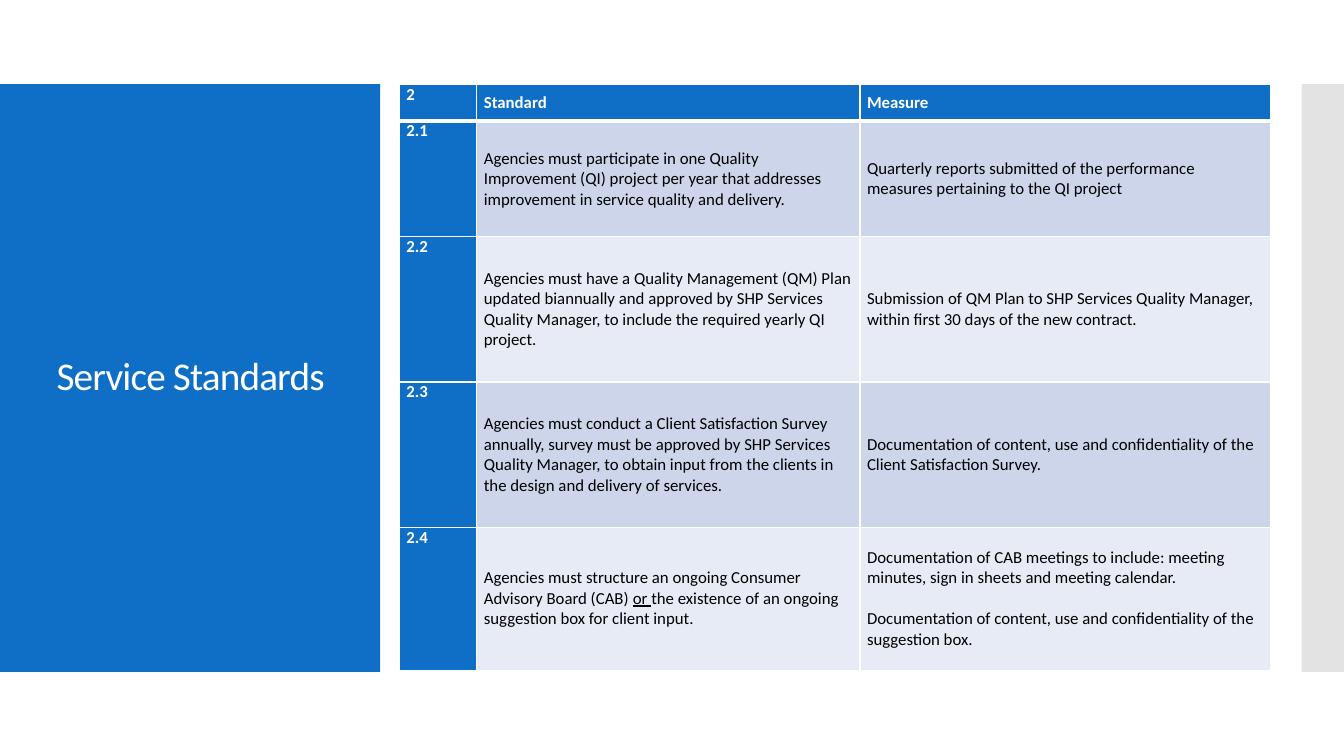
from dataclasses import dataclass

from lxml.etree import SubElement
from pptx import Presentation
from pptx.dml.color import RGBColor
from pptx.enum.shapes import MSO_SHAPE as Shape
from pptx.enum.text import MSO_ANCHOR as Anchor, PP_ALIGN as Align
from pptx.oxml.ns import qn
from pptx.util import Inches, Pt

# Content: a cell is a list of paragraphs, a paragraph a list of (text, underlined)
TITLE = "Service Standards"
HEADER = ("2", "Standard", "Measure")
STANDARDS = [
    ("2.1",
     [[("Agencies must participate in one Quality Improvement (QI) project per year "
        "that addresses improvement in service quality and delivery.", False)]],
     [[("Quarterly reports submitted of the performance measures pertaining to the "
        "QI project", False)]]),
    ("2.2",
     [[("Agencies must have a Quality Management (QM) Plan updated biannually and "
        "approved by SHP Services Quality Manager, to include the required yearly "
        "QI project.", False)]],
     [[("Submission of QM Plan to SHP Services Quality Manager, within first 30 days "
        "of the new contract.", False)]]),
    ("2.3",
     [[("Agencies must conduct a Client Satisfaction Survey annually, survey must be "
        "approved by SHP Services Quality Manager, to obtain input from the clients "
        "in the design and delivery of services.", False)]],
     [[("Documentation of content, use and confidentiality of the Client "
        "Satisfaction Survey.", False)]]),
    ("2.4",
     [[("Agencies must structure an ongoing Consumer Advisory Board (CAB) ", False),
       ("or ", True),
       ("the existence of an ongoing suggestion box for client input.", False)]],
     [[("Documentation of CAB meetings to include: meeting minutes, sign in sheets "
        "and meeting calendar.", False)],
      [("Documentation of content, use and confidentiality of the suggestion box.",
        False)]]),
]


@dataclass(frozen=True)
class Theme:
    font: str = "Calibri"
    title_size: float = 28
    body_size: float = 12
    paragraph_gap: float = 14.6
    blue: str = "0F6FC6"
    grey: str = "C8C8C8"
    white: str = "FFFFFF"
    black: str = "000000"
    bands: tuple = ("CCD5EA", "E7EBF5")
    rule: float = 1
    header_rule: float = 3


THEME = Theme()

# Layout in inches
WIDTH, HEIGHT = 13.33, 7.5
BAND_TOP, BAND_HEIGHT = HEIGHT / 9, HEIGHT * 7 / 9
PANEL_WIDTH, STRIP_WIDTH = 3.77, 0.42
TITLE_BOX = (0.28, 1.23, 3.22, 5.03)
TABLE_LEFT, TABLE_TOP = 3.96, 0.84
COLUMNS = (0.77, 3.8, 4.07)
ROWS = (0.36, 1.15, 1.44, 1.44, 1.42)
CELL_INSET = 0.07


def style_run(run, size, color, bold=False, underline=False):
    font = run.font
    font.name, font.size, font.bold = THEME.font, Pt(size), bold
    font.underline = underline
    font.color.rgb = RGBColor.from_string(color)


def add_block(slide, left, width, color):
    block = slide.shapes.add_shape(Shape.RECTANGLE, Inches(left), Inches(BAND_TOP),
                                   Inches(width), Inches(BAND_HEIGHT))
    block.shadow.inherit = False
    block.fill.solid()
    block.fill.fore_color.rgb = RGBColor.from_string(color)
    block.line.fill.background()
    return block


def set_borders(cell, top, bottom):
    properties = cell._tc.get_or_add_tcPr()
    widths = {"L": THEME.rule, "R": THEME.rule, "T": top, "B": bottom}
    for position, (side, width) in enumerate(widths.items()):
        line = SubElement(properties, qn(f"a:ln{side}"), w=str(Pt(width)))
        fill = SubElement(line, qn("a:solidFill"))
        SubElement(fill, qn("a:srgbClr"), val=THEME.white)
        properties.insert(position, line)


def fill_cell(cell, paragraphs, fill, color, bold, anchor):
    cell.margin_left = cell.margin_right = Inches(CELL_INSET)
    cell.margin_top = cell.margin_bottom = 0
    cell.vertical_anchor = anchor
    cell.fill.solid()
    cell.fill.fore_color.rgb = RGBColor.from_string(fill)
    frame = cell.text_frame
    for index, pieces in enumerate(paragraphs):
        paragraph = frame.add_paragraph() if index else frame.paragraphs[0]
        if index:
            paragraph.space_before = Pt(THEME.paragraph_gap)
        for text, underline in pieces:
            run = paragraph.add_run()
            run.text = text
            style_run(run, THEME.body_size, color, bold, underline)


def add_title(slide):
    box = slide.shapes.add_textbox(*map(Inches, TITLE_BOX))
    frame = box.text_frame
    frame.word_wrap = True
    frame.vertical_anchor = Anchor.MIDDLE
    frame.text = TITLE
    paragraph = frame.paragraphs[0]
    paragraph.alignment = Align.CENTER
    paragraph.line_spacing = 0.9
    run = paragraph.runs[0]
    style_run(run, THEME.title_size, THEME.white)
    run.font._element.set("spc", "-60")


def add_standards_table(slide):
    table = slide.shapes.add_table(
        len(ROWS), len(COLUMNS), Inches(TABLE_LEFT), Inches(TABLE_TOP),
        Inches(sum(COLUMNS)), Inches(sum(ROWS))).table
    for column, width in zip(table.columns, COLUMNS):
        column.width = Inches(width)
    for row, height in zip(table.rows, ROWS):
        row.height = Inches(height)

    for row_index, contents in enumerate([HEADER, *STANDARDS]):
        for column_index, content in enumerate(contents):
            cell = table.cell(row_index, column_index)
            heading = row_index == 0 or column_index == 0
            fill_cell(
                cell,
                [[(content, False)]] if heading else content,
                THEME.blue if heading else THEME.bands[(row_index - 1) % 2],
                THEME.white if heading else THEME.black,
                heading,
                Anchor.MIDDLE if column_index else Anchor.TOP)
            set_borders(cell,
                        THEME.header_rule if row_index == 1 else THEME.rule,
                        THEME.header_rule if row_index == 0 else THEME.rule)


def main():
    presentation = Presentation()
    presentation.slide_width, presentation.slide_height = Inches(WIDTH), Inches(HEIGHT)
    slide = presentation.slides.add_slide(presentation.slide_layouts[6])

    # Side blocks, the right one half transparent
    add_block(slide, 0, PANEL_WIDTH, THEME.blue)
    strip = add_block(slide, WIDTH - STRIP_WIDTH, STRIP_WIDTH, THEME.grey)
    strip_color = strip._element.spPr.find(qn("a:solidFill"))[0]
    SubElement(strip_color, qn("a:alpha"), val="50000")

    # Title and table
    add_title(slide)
    add_standards_table(slide)
    presentation.save("out.pptx")


if __name__ == "__main__":
    main()
